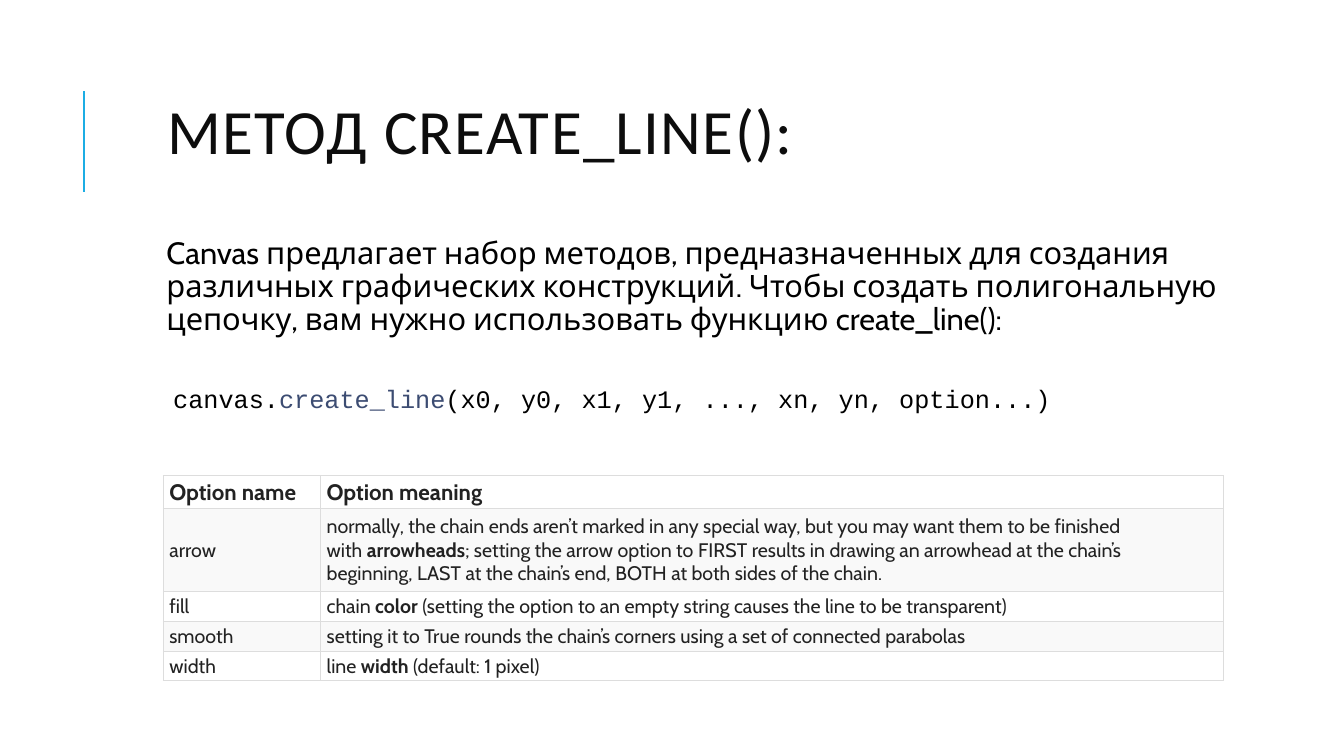
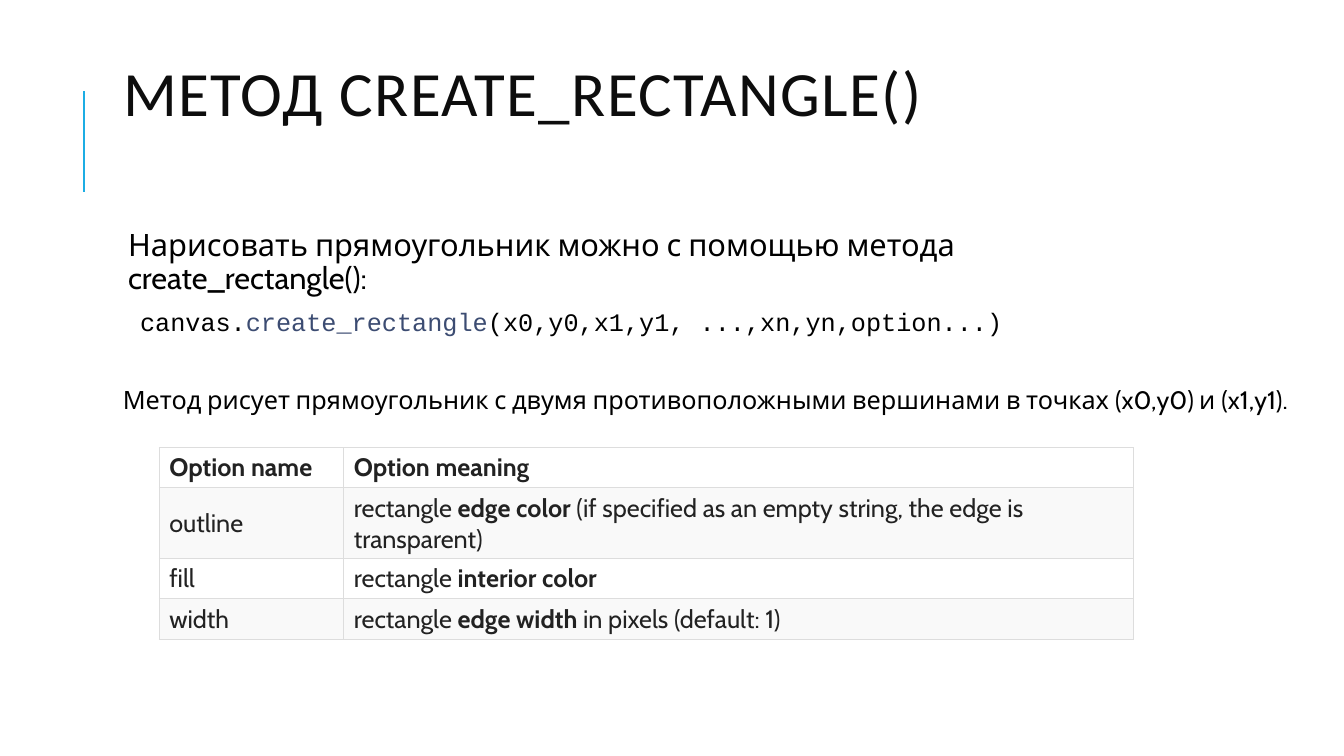
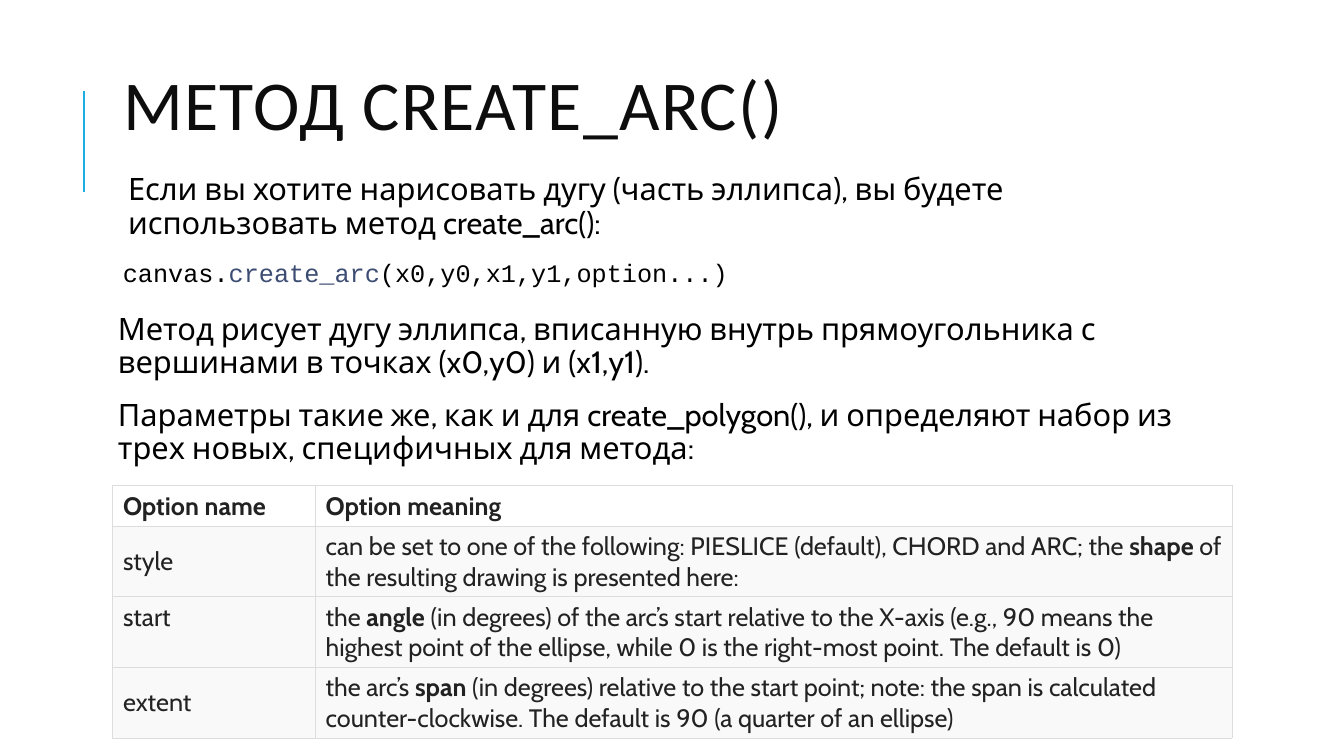
"""Build three slides about the drawing methods of a canvas."""
import dataclasses

import pptx
import pptx.dml.color
import pptx.enum.shapes
import pptx.enum.text
import pptx.oxml
import pptx.oxml.ns
import pptx.util

Inches = pptx.util.Inches
Pt = pptx.util.Pt
Anchor = pptx.enum.text.MSO_ANCHOR


@dataclasses.dataclass(frozen=True)
class Theme:
    accent: str = "1CADE4"
    title: str = "0D0D0D"
    text: str = "000000"
    method: str = "3C4C72"
    cell: str = "222222"
    border: str = "DDDDDD"
    white: str = "FFFFFF"
    band: str = "F9F9F9"
    title_font: str = "Calibri"
    body_font: str = "Cabin"
    code_font: str = "Courier New"
    body_size: int = 22
    code_size: int = 18


THEME = Theme()
BODY = dict(font=THEME.body_font, size=THEME.body_size, color=THEME.text,
            line=0.9, before=12, after=2)
INDENTED = dict(BODY, indent=0.1)
AFTER_CODE = dict(BODY, before=50)
NOTE = dict(font=THEME.body_font, size=THEME.code_size, color=THEME.text)
CODE = dict(font=THEME.code_font, size=THEME.code_size, color=THEME.text,
            accent=THEME.method)
TIGHT, ROOMY = 0.05, 0.1
HEADER = ("Option name", "Option meaning")

# In the wording, *...* marks emphasis and ~ a space that does not break.
SLIDES = [
    dict(
        title=("МЕТОД CREATE_LINE():", (1.56, 1.01, 10.63, 0.68), 45),
        texts=[
            ((1.5, 2.31, 10.63, 1.14), TIGHT, [(
                "Canvas предлагает набор методов, предназначенных для создания "
                "различных графических конструкций. Чтобы создать полигональную "
                "цепочку, вам нужно использовать функцию create_line():", INDENTED)]),
            ((1.62, 3.75, 10.63, 0.4), ROOMY, [
                ("canvas.*create_line*(x0, y0, x1, y1, ..., xn, yn, option...)", CODE)]),
        ],
        table=dict(
            at=(1.62, 4.72), columns=(1.56, 8.95),
            heights=(0.32, 0.82, 0.3, 0.29, 0.29),
            sizes=(16, 14), margins=(0.06, 0.03), banded=(1, 3), top=(),
            rows=[
                ("arrow", "normally, the chain ends aren’t marked in any special way, "
                 "but you may want them to be finished with~*arrowheads*; setting the "
                 "arrow option to~FIRST~results in drawing an arrowhead at the chain’s "
                 "beginning,~LAST~at the chain’s end,~BOTH~at both sides of the chain."),
                ("fill", "chain~*color*~(setting the option to an empty string causes "
                 "the line to be transparent)"),
                ("smooth", "setting it to~True~rounds the chain’s corners using a set "
                 "of connected parabolas"),
                ("width", "line~*width*~(default: 1 pixel)"),
            ]),
    ),
    dict(
        title=("МЕТОД CREATE_RECTANGLE()", (1.12, 0.64, 10.63, 0.68), 45),
        texts=[
            ((1.12, 2.23, 10.63, 4.4), TIGHT, [(
                "Нарисовать прямоугольник можно с помощью метода "
                "create_rectangle():", INDENTED)]),
            ((1.29, 2.99, 9.61, 0.4), ROOMY, [
                ("canvas.*create_rectangle*(x0,y0,x1,y1, ...,xn,yn,option...)", CODE)]),
            ((1.12, 3.76, 12.06, 0.4), ROOMY, [(
                "Метод рисует прямоугольник с двумя противоположными вершинами "
                "в точках (x0,y0) и (x1,y1).", NOTE)]),
        ],
        table=dict(
            at=(1.58, 4.44), columns=(1.83, 7.83), heights=(0.4, 0.7, 0.4, 0.4),
            sizes=(18, 18), margins=(0.1, 0.05), banded=(1, 3), top=(),
            rows=[
                ("outline", "rectangle~*edge color*~(if specified as an empty string, "
                 "the edge is transparent)"),
                ("fill", "rectangle~*interior color*"),
                ("width", "rectangle~*edge width*~in pixels (default: 1)"),
            ]),
    ),
    dict(
        title=("МЕТОД CREATE_ARC()", (1.12, 0.64, 10.63, 0.91), 50),
        texts=[
            ((1.12, 1.68, 10.63, 3.14), TIGHT, [
                ("Если вы хотите нарисовать дугу (часть эллипса), вы будете "
                 "использовать метод create_arc():", INDENTED),
                ("Метод рисует дугу эллипса, вписанную внутрь прямоугольника с "
                 "вершинами в точках (x0,y0) и (x1,y1).", AFTER_CODE),
                ("Параметры такие же, как и для create_polygon(), и определяют набор "
                 "из трех новых, специфичных для метода:", BODY)]),
            ((1.12, 2.5, 6.67, 0.4), ROOMY, [
                ("canvas.*create_arc*(x0,y0,x1,y1,option...)", CODE)]),
        ],
        table=dict(
            at=(1.12, 4.82), columns=(2.01, 9.09), heights=(0.4, 0.7, 0.7, 0.7),
            sizes=(18, 18), margins=(0.1, 0.05), banded=(1, 2, 3), top=(2,),
            rows=[
                ("style", "can be set to one of the following:~PIESLICE~(default),"
                 "~CHORD~and~ARC; the~*shape*~of the resulting drawing is presented "
                 "here:"),
                ("start", "the~*angle*~(in degrees) of the arc’s start relative to the "
                 "X-axis (e.g., 90 means the highest point of the ellipse, while 0 is "
                 "the right-most point. The default is 0)"),
                ("extent", "the arc’s~*span*~(in degrees) relative to the start point; "
                 "note: the span is calculated counter-clockwise. The default is 90 "
                 "(a quarter of an ellipse)"),
            ]),
    ),
]


def rgb(value):
    return pptx.dml.color.RGBColor.from_string(value)


def write(paragraph, text, *, font, size, color, accent=None, bold=False,
          strong=False, line=None, before=0, after=0, indent=0, tracking=0):
    paragraph.alignment = pptx.enum.text.PP_ALIGN.LEFT
    paragraph.line_spacing = line
    paragraph.space_before, paragraph.space_after = Pt(before), Pt(after)
    if indent:
        paragraph._p.get_or_add_pPr().set("marL", str(Inches(indent)))
    for index, part in enumerate(text.replace("~", chr(160)).split("*")):
        if not part:
            continue
        emphasis = index % 2 == 1
        run = paragraph.add_run()
        run.text = part
        run.font.name, run.font.size = font, Pt(size)
        run.font.bold = bold or (strong and emphasis)
        run.font.color.rgb = rgb(accent if accent and emphasis else color)
        if tracking:
            run._r.get_or_add_rPr().set("spc", str(tracking * 100))


def add_accent_line(slide, layout):
    rule = slide.shapes.add_connector(
        pptx.enum.shapes.MSO_CONNECTOR.STRAIGHT,
        Inches(0.83), Inches(1.9), Inches(0.83), Inches(0.9))
    rule.line.color.rgb = rgb(THEME.accent)
    rule.line.width = Pt(1.5)
    rule._element.spPr.append(pptx.oxml.parse_xml(
        f"<a:effectLst {pptx.oxml.ns.nsdecls('a')}/>"))
    layout.element.cSld.spTree.append(rule._element)


def set_title(slide, text, box, size):
    title = slide.shapes.title
    title.left, title.top, title.width, title.height = map(Inches, box)
    frame = title.text_frame
    frame.auto_size = pptx.enum.text.MSO_AUTO_SIZE.NONE
    frame.vertical_anchor = Anchor.MIDDLE
    write(frame.paragraphs[0], text, font=THEME.title_font, size=size,
          color=THEME.title, line=0.8, tracking=1)


def add_text(slide, box, margin, paragraphs):
    frame = slide.shapes.add_textbox(*map(Inches, box)).text_frame
    frame.word_wrap = True
    frame.margin_left = frame.margin_right = Inches(margin)
    frame.margin_top = frame.margin_bottom = Inches(0.05)
    for index, (text, style) in enumerate(paragraphs):
        paragraph = frame.add_paragraph() if index else frame.paragraphs[0]
        write(paragraph, text, **style)


def format_cell(cell, fill, margins, anchor):
    cell.margin_left = cell.margin_right = Inches(margins[0])
    cell.margin_top = cell.margin_bottom = Inches(margins[1])
    cell.vertical_anchor = anchor
    properties = cell._tc.get_or_add_tcPr()
    for side in "LRTB":
        properties.append(pptx.oxml.parse_xml(
            f'<a:ln{side} {pptx.oxml.ns.nsdecls("a")} w="{Pt(0.75)}"><a:solidFill>'
            f'<a:srgbClr val="{THEME.border}"/></a:solidFill></a:ln{side}>'))
    cell.fill.solid()
    cell.fill.fore_color.rgb = rgb(fill)


def add_options(slide, at, columns, heights, sizes, margins, banded, top, rows):
    options = slide.shapes.add_table(
        len(heights), len(columns), *map(Inches, at),
        Inches(sum(columns)), Inches(sum(heights))).table
    options.first_row = options.horz_banding = False
    for column, width in zip(options.columns, columns):
        column.width = Inches(width)
    for index, (height, texts) in enumerate(zip(heights, [HEADER, *rows])):
        options.rows[index].height = Inches(height)
        fill = THEME.band if index in banded else THEME.white
        anchor = Anchor.TOP if index in top else Anchor.MIDDLE
        for cell, text in zip(options.rows[index].cells, texts):
            format_cell(cell, fill, margins, anchor)
            write(cell.text_frame.paragraphs[0], text, font=THEME.body_font,
                  size=sizes[min(index, 1)], color=THEME.cell,
                  bold=index == 0, strong=True)


def main():
    deck = pptx.Presentation()
    deck.slide_width, deck.slide_height = Inches(13.33), Inches(7.5)
    title_only = deck.slide_layouts[5]
    for index, content in enumerate(SLIDES):
        slide = deck.slides.add_slide(title_only)
        if index == 0:
            add_accent_line(slide, title_only)
        set_title(slide, *content["title"])
        for box, margin, paragraphs in content["texts"]:
            add_text(slide, box, margin, paragraphs)
        add_options(slide, **content["table"])
    deck.save("out.pptx")


if __name__ == "__main__":
    main()
